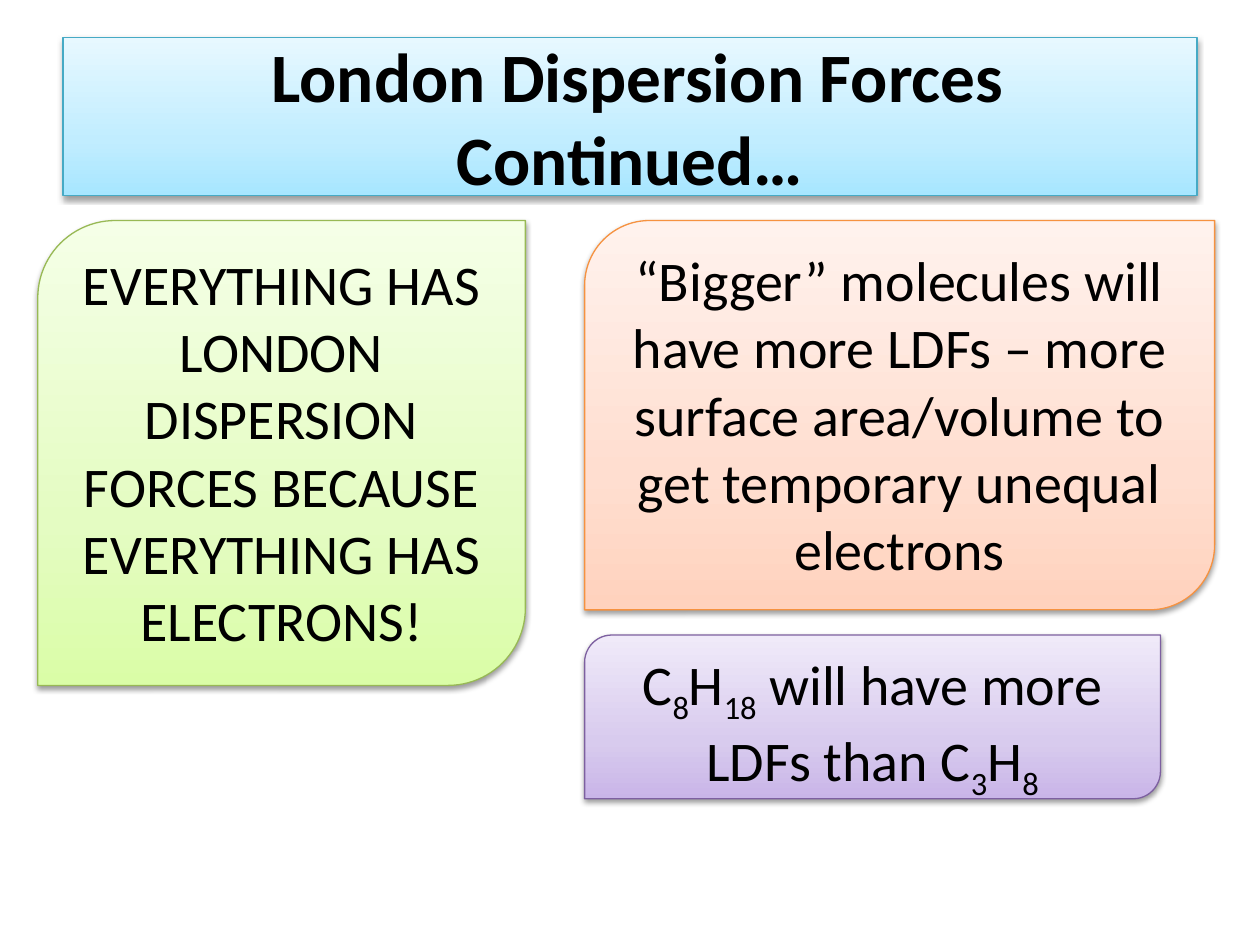
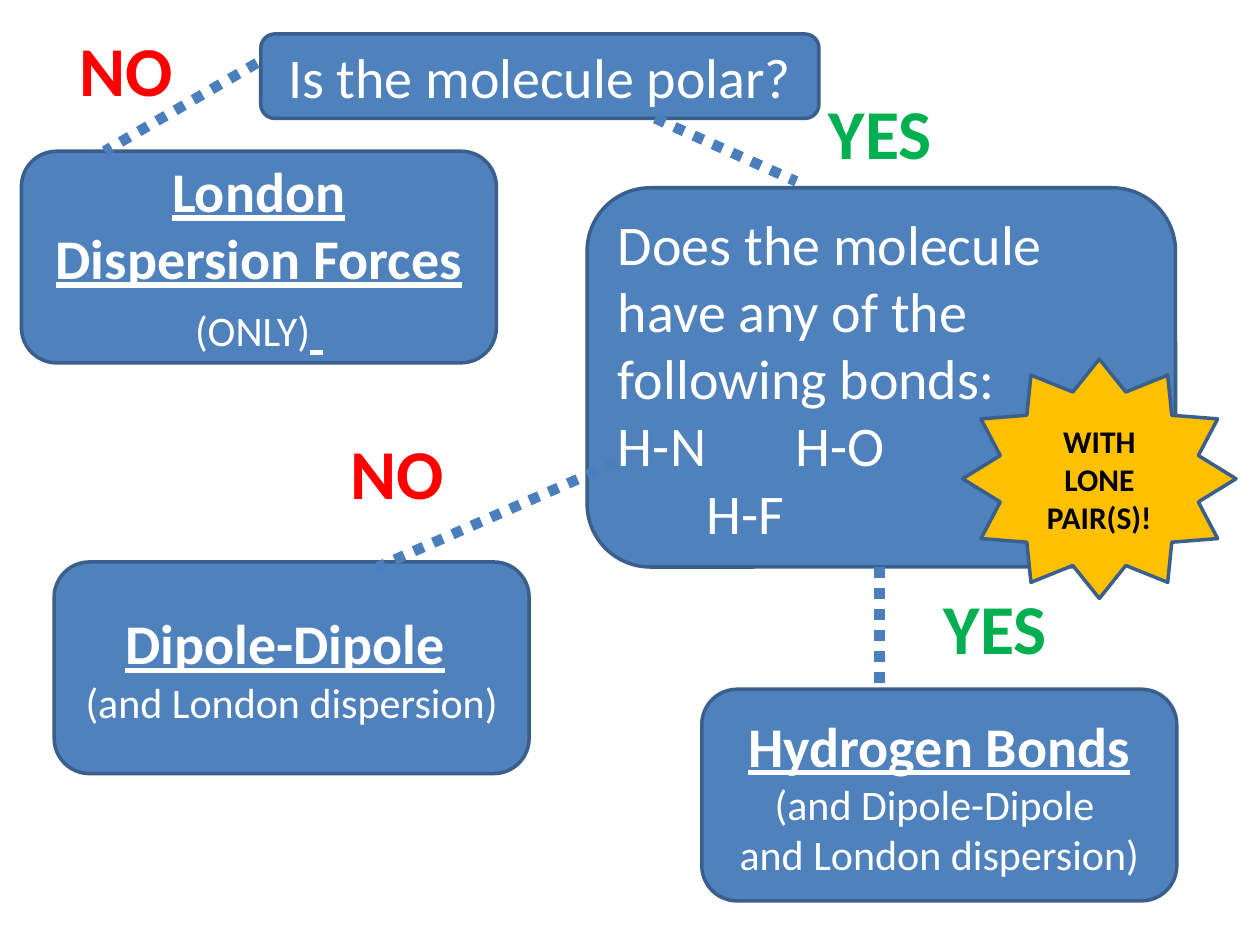
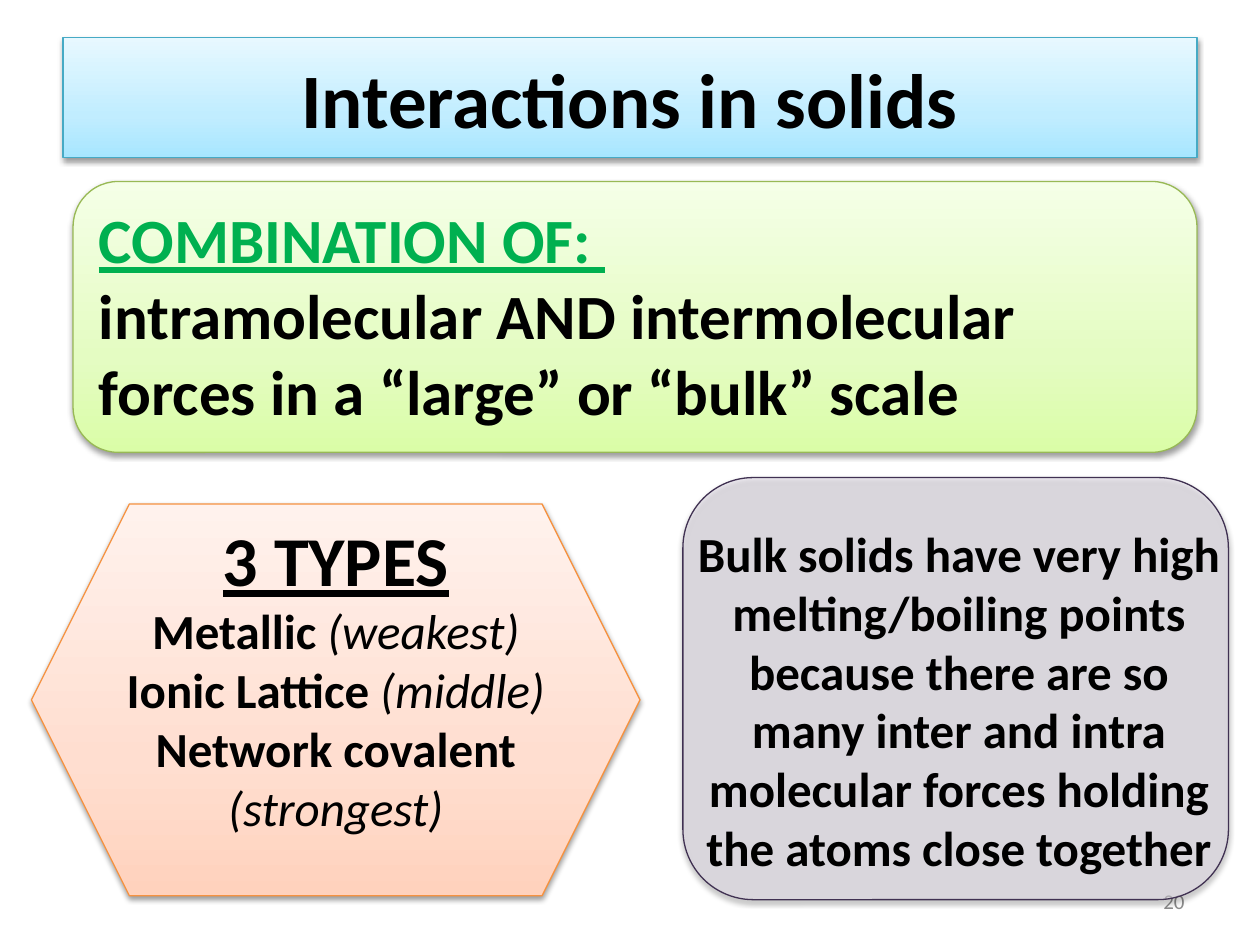
from itertools import groupby

from lxml.etree import SubElement
from pptx import Presentation
from pptx.dml.color import RGBColor
from pptx.enum.dml import MSO_LINE
from pptx.enum.shapes import MSO_CONNECTOR, MSO_SHAPE as SHAPE
from pptx.enum.text import MSO_ANCHOR as ANCHOR, MSO_AUTO_SIZE, PP_ALIGN as ALIGN
from pptx.oxml.ns import qn
from pptx.util import Inches, Pt

SLIDE_W, SLIDE_H = Inches(10), Inches(7.5)
COLUMN, ROW = SLIDE_W / 10, SLIDE_H / 7.5
FONT = "Calibri"
TITLE_ONLY, BLANK = 5, 6

BLACK = RGBColor(0x00, 0x00, 0x00)
WHITE = RGBColor(0xFF, 0xFF, 0xFF)
RED = RGBColor(0xFF, 0x00, 0x00)
GREEN = RGBColor(0x00, 0xB0, 0x50)
GOLD = RGBColor(0xFF, 0xC0, 0x00)
GREY = RGBColor(0x8C, 0x8C, 0x8C)
NODE_FILL = RGBColor(0x4F, 0x81, 0xBD)
NODE_LINE = RGBColor(0x3A, 0x5F, 0x8C)
BRANCH_LINE = RGBColor(0x4B, 0x7E, 0xBC)
LILAC = RGBColor(0xE6, 0xE0, 0xEC)
DARK_PURPLE = RGBColor(0x40, 0x31, 0x52)

# Each card theme: outline, then the gradient from bottom to top
STOPS = (0, 35, 100)
AQUA_CARD = (RGBColor(0x46, 0xAA, 0xC5), RGBColor(0xA7, 0xE6, 0xFF),
             RGBColor(0xC1, 0xED, 0xFF), RGBColor(0xE7, 0xF8, 0xFF))
GREEN_CARD = (RGBColor(0x98, 0xB9, 0x55), RGBColor(0xDA, 0xFD, 0xA7),
              RGBColor(0xE4, 0xFC, 0xC2), RGBColor(0xF5, 0xFF, 0xE7))
ORANGE_CARD = (RGBColor(0xF6, 0x92, 0x40), RGBColor(0xFF, 0xD2, 0xBD),
               RGBColor(0xFF, 0xDE, 0xD0), RGBColor(0xFF, 0xF2, 0xED))
PURPLE_CARD = (RGBColor(0x7D, 0x60, 0xA0), RGBColor(0xC9, 0xB5, 0xE8),
               RGBColor(0xD8, 0xCB, 0xEE), RGBColor(0xF0, 0xEA, 0xF9))

HEADING = dict(bold=True, underline=True)
SMALL = dict(size=24, bold=False, underline=False)
REMARK = dict(bold=False, italic=True)


def cells(column, row, columns, rows):
    return (round(column * COLUMN), round(row * ROW),
            round(columns * COLUMN), round(rows * ROW))


def add_run(paragraph, text, size, color, bold=False, italic=False,
            underline=False, baseline=0):
    for index, line in enumerate(text.split("\n")):
        if index:
            paragraph.add_line_break()
        if not line:
            continue
        run = paragraph.add_run()
        run.text = line
        font = run.font
        font.name, font.size, font.color.rgb = FONT, Pt(size), color
        font.bold, font.italic, font.underline = bold, italic, underline
        if baseline:
            run._r.get_or_add_rPr().set("baseline", str(baseline * 1000))


def write(shape, *paragraphs, align=ALIGN.CENTER, anchor=ANCHOR.TOP,
          side_inset=0.1, **style):
    """Fill a shape; a paragraph is a string or a list of (text, overrides)."""
    frame = shape.text_frame
    frame.word_wrap, frame.auto_size = True, MSO_AUTO_SIZE.NONE
    frame.vertical_anchor = anchor
    frame.margin_left = frame.margin_right = Inches(side_inset)
    for index, runs in enumerate(paragraphs):
        paragraph = frame.add_paragraph() if index else frame.paragraphs[0]
        paragraph.alignment = align
        for text, overrides in [(runs, {})] if isinstance(runs, str) else runs:
            add_run(paragraph, text, **{**style, **overrides})
    return frame


def subscripted(formula):
    return [("".join(part), dict(baseline=-25 if is_digit else 0))
            for is_digit, part in groupby(formula, str.isdigit)]


def add_color(parent, color, alpha=None):
    node = SubElement(parent, qn("a:srgbClr"), val=str(color))
    if alpha:
        SubElement(node, qn("a:alpha"), val=str(alpha * 1000))


def cast_shadow(shape):
    shape.shadow.inherit = False
    effects = shape._element.spPr.find(qn("a:effectLst"))
    shadow = SubElement(effects, qn("a:outerShdw"), blurRad="40000",
                        dist="20000", dir="5400000", rotWithShape="0")
    add_color(shadow, BLACK, 38)


def outline(shape, color, width):
    shape.line.color.rgb, shape.line.width = color, Pt(width)


def style_card(shape, theme):
    edge, *shades = theme
    shape.fill.gradient()
    shape.fill.gradient_angle = 90
    stops = shape._element.spPr.find(qn("a:gradFill")).find(qn("a:gsLst"))
    for stop in list(stops):
        stops.remove(stop)
    for position, shade in zip(STOPS, shades):
        add_color(SubElement(stops, qn("a:gs"), pos=str(position * 1000)), shade)
    outline(shape, edge, 0.75)
    cast_shadow(shape)


def add_title(slide, text, rows, size):
    title = slide.shapes.title
    title.left, title.top, title.width, title.height = cells(0.5, 0.3, 9, rows)
    style_card(title, AQUA_CARD)
    write(title, text, anchor=ANCHOR.MIDDLE, size=size, color=BLACK, bold=True)


def add_card(slide, preset, area, theme, *paragraphs, size=32, **style):
    card = slide.shapes.add_shape(preset, *cells(*area))
    style_card(card, theme)
    write(card, *paragraphs, size=size, color=BLACK, **style)


def add_node(slide, area, *paragraphs, preset=SHAPE.FLOWCHART_ALTERNATE_PROCESS,
             fill=NODE_FILL, size=32, color=WHITE, **style):
    node = slide.shapes.add_shape(preset, *cells(*area))
    node.shadow.inherit = False
    node.fill.solid()
    node.fill.fore_color.rgb = fill
    outline(node, NODE_LINE, 2)
    return write(node, *paragraphs, anchor=ANCHOR.MIDDLE, size=size,
                 color=color, **style)


def add_label(slide, area, text, **style):
    write(slide.shapes.add_textbox(*cells(*area)), text, **style)


def add_answer(slide, column, row, answer, columns=1.67):
    add_label(slide, (column, row, columns, 0.77), answer, size=40, bold=True,
              color=GREEN if answer == "YES" else RED)


def add_branch(slide, start, end):
    branch = slide.shapes.add_connector(MSO_CONNECTOR.STRAIGHT,
                                        *cells(*start, *end))
    outline(branch, BRANCH_LINE, 6)
    branch.line.dash_style = MSO_LINE.ROUND_DOT
    SubElement(branch._element.spPr, qn("a:effectLst"))


def build_dispersion(slide):
    add_title(slide, " London Dispersion Forces Continued…", 1.25, 39.6)
    leaf = SHAPE.ROUND_2_DIAG_RECTANGLE
    add_card(slide, leaf, (0.3, 1.75, 3.87, 3.69), GREEN_CARD,
             "EVERYTHING HAS LONDON DISPERSION FORCES BECAUSE "
             "EVERYTHING HAS ELECTRONS!")
    add_card(slide, leaf, (4.64, 1.75, 5, 3.09), ORANGE_CARD,
             "“Bigger” molecules will have more LDFs – more surface "
             "area/volume to get temporary unequal electrons")
    add_card(slide, leaf, (4.64, 5.04, 4.57, 1.3), PURPLE_CARD,
             subscripted("C8H18 will have more LDFs than C3H8"))


def build_decision_tree(slide):
    result = (3.77, 1.68)
    add_node(slide, (2.07, 0.27, 4.43, 0.67), "Is the molecule polar?")
    bonds = add_node(slide, (4.66, 1.49, 4.67, 3.01),
                     "Does the molecule have any of the following bonds:\n"
                     "H-N\tH-O", "H-F", align=ALIGN.LEFT)
    question, last_bond = (p._p.get_or_add_pPr() for p in bonds.paragraphs)
    tabs = SubElement(question, qn("a:tabLst"))
    SubElement(tabs, qn("a:tab"), pos=str(Inches(1.41)), algn="l")
    last_bond.set("marL", str(Inches(0.7)))

    add_node(slide, (0.17, 1.2, *result),
             [("London Dispersion Forces\n", HEADING), ("(ONLY)", SMALL),
              (" ", HEADING)])
    add_answer(slide, 6.15, 0.66, "YES")
    add_answer(slide, 0.17, 0.16, "NO")
    add_branch(slide, (5.2, 0.94), (6.32, 1.44))
    add_branch(slide, (2.04, 0.5), (0.83, 1.2))
    add_node(slide, (0.43, 4.46, *result),
             [("Dipole-Dipole", HEADING), (" \n", {}),
              ("(and London dispersion)", SMALL)])
    add_answer(slide, 2.32, 3.36, "NO")
    add_branch(slide, (4.89, 3.67), (3, 4.5))
    add_answer(slide, 7.25, 4.59, "YES", columns=1.3)
    add_branch(slide, (6.98, 4.5), (6.98, 5.47))
    add_node(slide, (5.57, 5.47, *result),
             [("Hydrogen Bonds ", HEADING),
              ("(and Dipole-Dipole \nand London dispersion)", SMALL)])
    add_node(slide, (7.64, 2.85, 2.17, 1.9), "WITH LONE PAIR(S)!",
             preset=SHAPE.STAR_12_POINT, fill=GOLD, size=18, color=BLACK,
             bold=True)


def build_solids(slide):
    add_title(slide, "Interactions in solids", 0.95, 44)
    add_card(slide, SHAPE.HEXAGON, (0.25, 4, 4.83, 3.11), ORANGE_CARD,
             [("3 TYPES", dict(size=40, underline=True))],
             [("Metallic ", {}), ("(weakest)\n", REMARK),
              ("Ionic Lattice ", {}), ("(middle)", REMARK)],
             [("Network covalent ", {}), ("(strongest)", REMARK)],
             size=28, bold=True, anchor=ANCHOR.BOTTOM, side_inset=0)
    add_label(slide, (7.17, 6.95, 2.33, 0.4), "20", size=12, color=GREY,
              align=ALIGN.RIGHT, anchor=ANCHOR.MIDDLE)
    rounded = SHAPE.FLOWCHART_ALTERNATE_PROCESS
    add_card(slide, rounded, (0.58, 1.44, 8.92, 2.15), GREEN_CARD,
             [("COMBINATION OF: \n", dict(color=GREEN, underline=True)),
              ("intramolecular AND intermolecular forces in a “large” or "
               "“bulk” scale", {})],
             size=36, bold=True, align=ALIGN.LEFT)

    panel = slide.shapes.add_shape(rounded, *cells(5.42, 3.79, 4.33, 3.35))
    panel.fill.solid()
    panel.fill.fore_color.rgb = LILAC
    tint = panel._element.spPr.find(qn("a:solidFill"))[0]
    SubElement(tint, qn("a:alpha"), val="51000")
    outline(panel, DARK_PURPLE, 0.75)
    cast_shadow(panel)
    add_label(slide, (5.42, 4, 4.38, 3.11),
              "Bulk solids have very high melting/boiling points because there "
              "are so many inter and intra molecular forces holding the atoms "
              "close together",
              size=28, color=BLACK, bold=True, anchor=ANCHOR.MIDDLE)


def main():
    deck = Presentation()
    deck.slide_width, deck.slide_height = SLIDE_W, SLIDE_H
    for layout, build in ((TITLE_ONLY, build_dispersion),
                          (BLANK, build_decision_tree),
                          (TITLE_ONLY, build_solids)):
        build(deck.slides.add_slide(deck.slide_layouts[layout]))
    deck.save("out.pptx")


if __name__ == "__main__":
    main()
